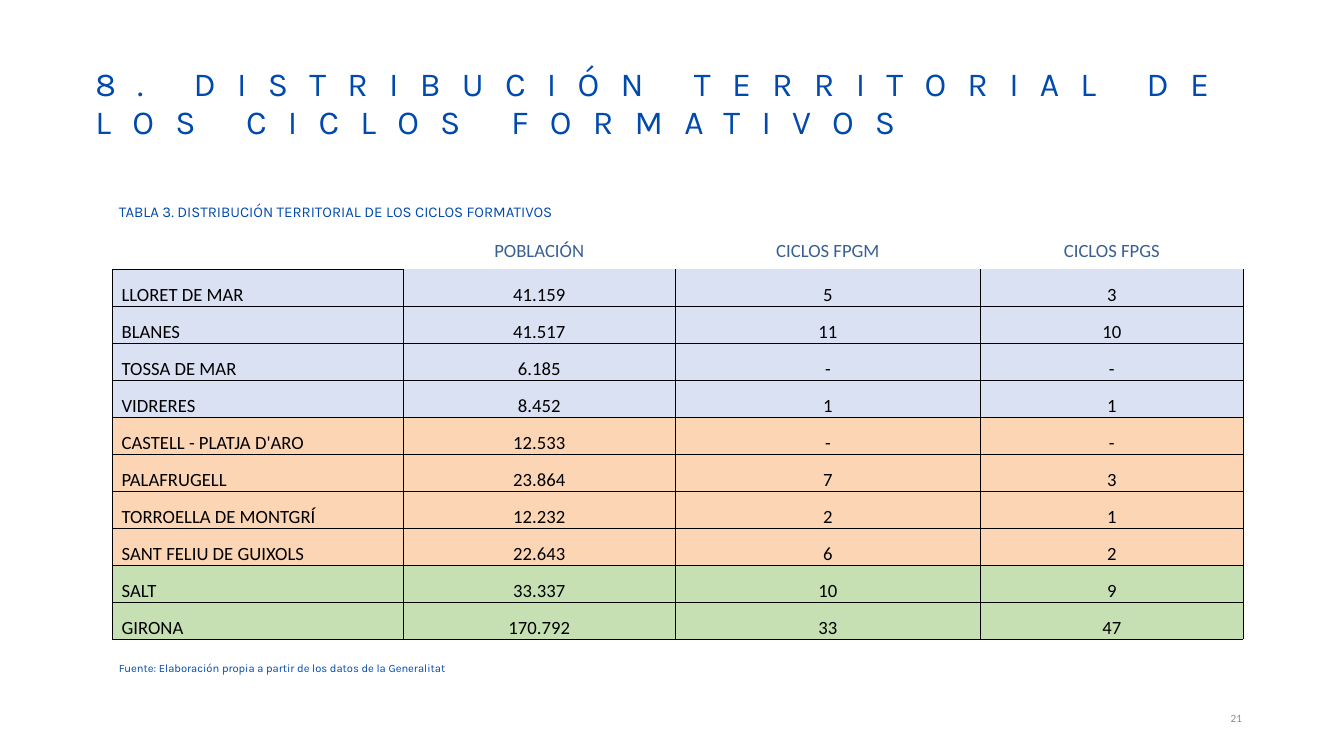
from typing import NamedTuple

from pptx import Presentation
from pptx.dml.color import RGBColor
from pptx.enum.text import MSO_ANCHOR as Anchor, PP_ALIGN as Align
from pptx.oxml import parse_xml
from pptx.oxml.ns import nsdecls
from pptx.util import Inches, Pt

COLORS = {
    "title": "004AAD", "header": "376092", "page": "8C8C8C",
    "text": "000000", "border": "000000", "white": "FFFFFF",
    "blue": "D9E1F2", "orange": "FCD5B5", "green": "C6E0B4",
}
NO_STYLE = "{2D5ABB26-0587-4C30-8999-92F81FD0307C}"
COLUMN_WIDTHS = (4.33, 4.05, 4.54, 3.91)
ROW_HEIGHT = 0.55
HEADERS = ("", "POBLACIÓN", "CICLOS FPGM", "CICLOS FPGS")


class Town(NamedTuple):
    name: str
    population: str
    fpgm: str
    fpgs: str
    area: str


class Box(NamedTuple):
    left: float
    top: float
    width: float
    height: float


TOWNS = (
    Town("LLORET DE MAR", "41.159", "5", "3", "blue"),
    Town("BLANES", "41.517", "11", "10", "blue"),
    Town("TOSSA DE MAR", "6.185", "-", "-", "blue"),
    Town("VIDRERES", "8.452", "1", "1", "blue"),
    Town("CASTELL - PLATJA D'ARO", "12.533", "-", "-", "orange"),
    Town("PALAFRUGELL", "23.864", "7", "3", "orange"),
    Town("TORROELLA DE MONTGRÍ", "12.232", "2", "1", "orange"),
    Town("SANT FELIU DE GUIXOLS", "22.643", "6", "2", "orange"),
    Town("SALT", "33.337", "10", "9", "green"),
    Town("GIRONA", "170.792", "33", "47", "green"),
)


def write(frame, text: str, *, size: float, color: str, font: str = "Karla",
          align=Align.LEFT, line_pt: float = 0, tracking: float = 0) -> None:
    """Fill a text frame; tracking is the letter spacing in points."""
    paragraph = frame.paragraphs[0]
    paragraph.alignment = align
    if line_pt:
        paragraph.line_spacing = Pt(line_pt)
    run = paragraph.add_run()
    run.text = text
    run.font.size = Pt(size)
    run.font.name = font
    run.font.color.rgb = RGBColor.from_string(COLORS[color])
    if tracking:
        run.font._element.set("spc", str(round(tracking * 100)))


def add_text(slide, box: Box, text: str, *, inset: bool = True,
             anchor=Anchor.TOP, **text_format) -> None:
    frame = slide.shapes.add_textbox(*map(Inches, box)).text_frame
    frame.word_wrap = True
    frame.vertical_anchor = anchor
    if not inset:
        frame.margin_left = frame.margin_right = 0
        frame.margin_top = frame.margin_bottom = 0
    write(frame, text, **text_format)


def set_borders(cell, sides: str) -> None:
    """Rule the sides named by letters among L, R, T, B and clear the others."""
    properties = cell._tc.get_or_add_tcPr()
    for position, side in enumerate("LRTB"):
        paint = (f'<a:solidFill><a:srgbClr val="{COLORS["border"]}"/></a:solidFill>'
                 if side in sides else "<a:noFill/>")
        properties.insert(position, parse_xml(
            f'<a:ln{side} {nsdecls("a")} w="{Pt(0.5)}">{paint}</a:ln{side}>'))


def format_cell(cell, text: str, *, fill: str, borders: str, color: str,
                anchor, align, indent: float = 0.01) -> None:
    cell.margin_left = Inches(indent)
    cell.margin_right = cell.margin_top = Inches(0.01)
    cell.margin_bottom = 0
    cell.vertical_anchor = anchor
    cell.fill.solid()
    cell.fill.fore_color.rgb = RGBColor.from_string(COLORS[fill])
    set_borders(cell, borders)
    if text:
        write(cell.text_frame, text, size=20, color=color, font="Calibri", align=align)


def add_town_table(slide) -> None:
    row_count = len(TOWNS) + 1
    box = Box(1.67, 3.46, sum(COLUMN_WIDTHS), row_count * ROW_HEIGHT)
    frame = slide.shapes.add_table(row_count, len(HEADERS), *map(Inches, box))
    table = frame.table
    table.first_row = table.horz_banding = False
    table._tbl.tblPr.find("{*}tableStyleId").text = NO_STYLE
    for column, width in zip(table.columns, COLUMN_WIDTHS):
        column.width = Inches(width)
    for row in table.rows:
        row.height = Inches(ROW_HEIGHT)

    for col, header in enumerate(HEADERS):
        format_cell(table.cell(0, col), header, fill="white", color="header",
                    borders="" if header else "B",
                    anchor=Anchor.MIDDLE, align=Align.CENTER)
    for row, town in enumerate(TOWNS, start=1):
        for col, value in enumerate(town[:len(HEADERS)]):
            under_header = row == 1 and col > 0
            format_cell(table.cell(row, col), value, fill=town.area, color="text",
                        borders="LRB" if under_header else "LRTB",
                        anchor=Anchor.BOTTOM,
                        align=Align.CENTER if col else Align.LEFT,
                        indent=0.01 if col else 0.14)


def main() -> None:
    deck = Presentation()
    deck.slide_width, deck.slide_height = Inches(20), Inches(11.25)
    slide = deck.slides.add_slide(deck.slide_layouts[6])

    add_town_table(slide)
    add_text(slide, Box(1.42, 0.96, 18.08, 1.15),
             "8. DISTRIBUCIÓN TERRITORIAL DE LOS CICLOS FORMATIVOS",
             size=36, color="title", inset=False, line_pt=41, tracking=22.8)
    add_text(slide, Box(1.67, 9.79, 7.18, 0.3),
             "Fuente: Elaboración propia a partir de los datos de la Generalitat",
             size=12, color="title")
    add_text(slide, Box(1.67, 2.96, 10, 0.37),
             "TABLA 3. DISTRIBUCIÓN TERRITORIAL DE LOS CICLOS FORMATIVOS",
             size=16, color="title")
    add_text(slide, Box(16.25, 10.48, 2.33, 0.4), "21", size=12, color="page",
             font="Calibri", align=Align.RIGHT, anchor=Anchor.MIDDLE)
    deck.save("out.pptx")


if __name__ == "__main__":
    main()
